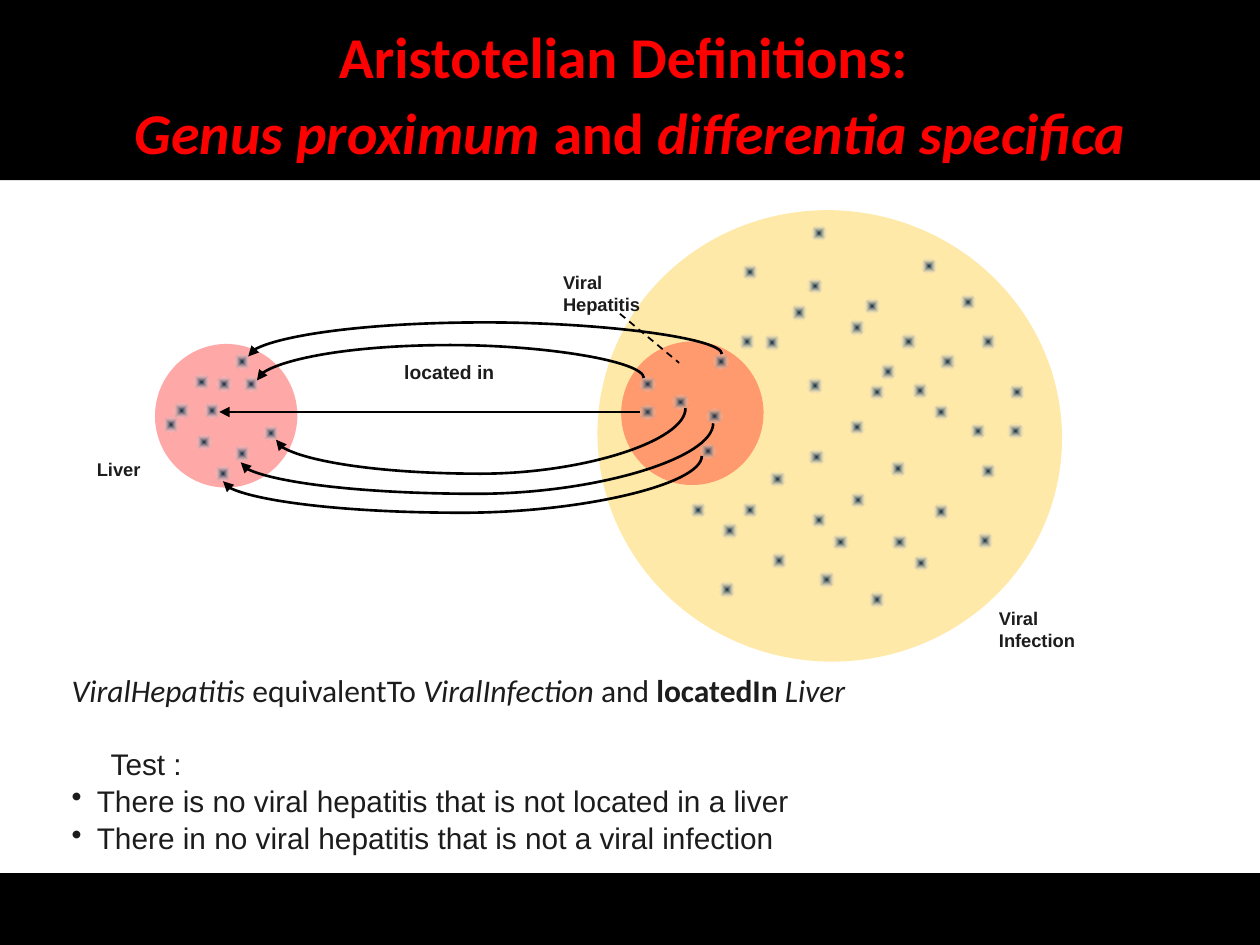
import dataclasses
import typing

import lxml.etree
import pptx
import pptx.dml.color
import pptx.enum.dml
import pptx.enum.shapes
import pptx.enum.text
import pptx.oxml
import pptx.oxml.ns
import pptx.util

COLOURS = {
    "band": "000000", "title": "FF0000", "text": "1C1C1C", "line": "000000",
    "infection": "FFC000", "organ": "FF0000", "dot": "08253C", "dot_edge": "FFFFFF",
}
SHAPES = pptx.enum.shapes.MSO_SHAPE
CONNECTORS = pptx.enum.shapes.MSO_CONNECTOR
DOT_SIZE = 0.12
DOT_TILT = 5.2
CIRCLE_TILT = 9.7


class Circle(typing.NamedTuple):
    left: float
    top: float
    width: float
    height: float
    colour: str


class Arc(typing.NamedTuple):
    """A curved arrow from an infection dot to a liver dot, peaking at bend."""
    liver: tuple[float, float]
    infection: tuple[float, float]
    bend: float


class Label(typing.NamedTuple):
    left: float
    top: float
    width: float
    height: float
    lines: list[str]
    size: float = 10.5


@dataclasses.dataclass
class Span:
    text: str
    bold: bool = False
    italic: bool = False


@dataclasses.dataclass
class Line:
    spans: list[Span]
    font: str = "Arial"
    size: float = 17
    margin: float = 0.31
    indent: float = 0
    before: float = 1
    bullet: bool = False


CIRCLES = [
    Circle(4.74, 1.67, 3.69, 3.58, "infection"),
    Circle(4.93, 2.71, 1.13, 1.14, "organ"),
    Circle(1.23, 2.73, 1.13, 1.14, "organ"),
]
# Left and top of each dot, in inches
INFECTION_DOTS = [
    (5.48, 3.99), (6.11, 3.74), (5.73, 4.15), (6.44, 4.07), (6.61, 4.24), (5.89, 3.99),
    (6.42, 3.57), (6.12, 4.39), (6.75, 3.91), (7.08, 4.24), (7.25, 4.41), (6.07, 2.66),
    (5.89, 2.1), (6.41, 3), (6.74, 3.33), (7.15, 2.65), (7.07, 3.66), (7.62, 2.34),
    (7.41, 4), (6.9, 4.7), (6.44, 1.79), (6.28, 2.42), (6.41, 2.21), (6.86, 2.37),
    (6.74, 2.54), (7.31, 2.05), (8.01, 3.05), (7.24, 3.04), (7.41, 3.21), (7.78, 3.68),
    (6.99, 2.89), (7.7, 3.36), (7.46, 2.81), (8, 3.36), (7.78, 2.65), (6.9, 3.05),
    (5.71, 4.62), (6.5, 4.54), (5.87, 2.65), (7.76, 4.23),
]
HEPATITIS_DOTS = [(5.08, 2.99), (5.61, 3.24), (5.56, 3.52), (5.08, 3.21), (5.34, 3.13), (5.66, 2.81)]
LIVER_DOTS = [
    (1.86, 2.81), (2.09, 3.38), (1.86, 3.54), (1.71, 3.7), (1.62, 3.2), (1.93, 2.99),
    (1.54, 2.97), (1.3, 3.31), (1.56, 3.45), (1.38, 3.2), (1.72, 2.99),
]
ARCS = [
    Arc((1.97, 2.83), (5.73, 2.81), 2.56),
    Arc((2.04, 3.02), (5.11, 3), 2.74),
    Arc((2.19, 3.49), (5.44, 3.24), 3.76),
    Arc((1.91, 3.67), (5.66, 3.36), 3.92),
    Arc((1.77, 3.82), (5.57, 3.62), 4.07),
]
LABELS = [
    Label(7.83, 4.77, 0.81, 0.45, ["Viral", "Infection"]),
    Label(4.37, 2.1, 0.82, 0.45, ["Viral ", "Hepatitis"]),
    Label(3.11, 2.81, 0.92, 0.29, ["located in"], 11),
    Label(0.67, 3.59, 0.55, 0.28, ["Liver"]),
]
TITLE = [
    [Span("Aristotelian Definitions: ", bold=True)],
    [Span("Genus proximum ", True, True), Span("and ", True), Span("differentia specifica", True, True)],
]
BODY = [
    Line([Span("ViralHepatitis", italic=True), Span(" equivalentTo "),
          Span("ViralInfection ", italic=True), Span("and "),
          Span("locatedIn ", bold=True), Span("Liver", italic=True)],
         "Calibri", 18, indent=-0.31),
    Line([Span("Test :")], before=20.6),
    Line([Span("There is no viral hepatitis that is not located in a liver")],
         margin=0.2, indent=-0.2, bullet=True),
    Line([Span("There in no viral hepatitis that is not a viral infection")],
         margin=0.2, indent=-0.2, bullet=True),
]


def length(inches: float) -> pptx.util.Length:
    return pptx.util.Cm(inches * 2.54)


def rgb(name: str) -> pptx.dml.color.RGBColor:
    return pptx.dml.color.RGBColor.from_string(COLOURS[name])


def add_child(parent, tag: str, **attributes: str):
    return lxml.etree.SubElement(parent, pptx.oxml.ns.qn(tag), attributes)


def add_span(para, span: Span, font: str, size: float, colour: str) -> None:
    run = para.add_run()
    run.text = span.text
    run.font.name, run.font.size = font, pptx.util.Pt(size)
    run.font.bold, run.font.italic = span.bold, span.italic
    run.font.color.rgb = rgb(colour)


def add_lines(para, lines: list[list[Span]], font: str, size: float, colour: str) -> None:
    for number, spans in enumerate(lines):
        if number:
            para.add_line_break()
        for span in spans:
            add_span(para, span, font, size, colour)


def add_plain_shape(page, kind, left: float, top: float, width: float, height: float, colour: str):
    shape = page.shapes.add_shape(kind, *map(length, (left, top, width, height)))
    shape.shadow.inherit = False
    shape.fill.solid()
    shape.fill.fore_color.rgb = rgb(colour)
    shape.line.fill.background()
    return shape


def add_circle(page, circle: Circle) -> None:
    shape = add_plain_shape(page, SHAPES.OVAL, *circle)
    shape.rotation = CIRCLE_TILT
    colour = shape._element.spPr.find(".//" + pptx.oxml.ns.qn("a:srgbClr"))
    add_child(colour, "a:alpha", val="34000")


def add_dot(page, left: float, top: float) -> None:
    shape = add_plain_shape(page, SHAPES.OVAL, left, top, DOT_SIZE, DOT_SIZE, "dot")
    shape.rotation = DOT_TILT
    gradient = pptx.oxml.parse_xml(
        f'<a:gradFill {pptx.oxml.ns.nsdecls("a")} rotWithShape="1"><a:gsLst>'
        f'<a:gs pos="0"><a:srgbClr val="{COLOURS["dot"]}"/></a:gs>'
        f'<a:gs pos="100000"><a:srgbClr val="{COLOURS["dot_edge"]}"><a:alpha val="0"/></a:srgbClr></a:gs>'
        '</a:gsLst><a:path path="shape">'
        '<a:fillToRect l="50000" t="50000" r="50000" b="50000"/></a:path></a:gradFill>')
    properties = shape._element.spPr
    properties.replace(properties.find(pptx.oxml.ns.qn("a:solidFill")), gradient)


def add_line(page, kind, start: tuple[float, float], end: tuple[float, float], width: float, arrow: bool):
    line = page.shapes.add_connector(kind, *map(length, (*start, *end)))
    line.line.color.rgb = rgb("line")
    line.line.width = pptx.util.Pt(width)
    if arrow:
        add_child(line.line._get_or_add_ln(), "a:headEnd", type="triangle")
    add_child(line._element.spPr, "a:effectLst")
    return line


def add_arc(page, arc: Arc) -> None:
    """Lay the curve out upright around its middle, then turn it a quarter."""
    (x1, y1), (x2, y2) = arc.liver, arc.infection
    middle_x, middle_y = (x1 + x2) / 2, (y1 + y2) / 2
    rise, run = (y1 - y2) / 2, (x2 - x1) / 2
    line = add_line(page, CONNECTORS.CURVE, (middle_x + rise, middle_y + run),
                    (middle_x - rise, middle_y - run), 1.5, True)
    properties = line._element.spPr
    properties.find(pptx.oxml.ns.qn("a:xfrm")).set("rot", "5400000")
    guides = properties.find(".//" + pptx.oxml.ns.qn("a:avLst"))
    bend = round((y1 - arc.bend) / (y1 - y2) * 100000)
    add_child(guides, "a:gd", name="adj1", fmla=f"val {bend}")


def add_label(page, label: Label) -> None:
    box = page.shapes.add_textbox(*map(length, label[:4]))
    box.text_frame.word_wrap = False
    lines = [[Span(text, bold=True)] for text in label.lines]
    add_lines(box.text_frame.paragraphs[0], lines, "Arial", label.size, "text")


def add_title(page) -> None:
    frame = add_plain_shape(page, SHAPES.RECTANGLE, 0, 0, 10, 1.43, "band").text_frame
    frame.word_wrap = True
    frame.vertical_anchor = pptx.enum.text.MSO_ANCHOR.MIDDLE
    frame.margin_left = frame.margin_right = length(0.08)
    frame.margin_top = frame.margin_bottom = length(0.04)
    para = frame.paragraphs[0]
    para.alignment = pptx.enum.text.PP_ALIGN.CENTER
    para.line_spacing = 1.1
    add_lines(para, TITLE, "Calibri", 33, "title")


def add_body(page) -> None:
    frame = page.shapes.add_textbox(*map(length, (0.47, 5.28, 9.1, 1.6))).text_frame
    frame.word_wrap = True
    for number, line in enumerate(BODY):
        para = frame.add_paragraph() if number else frame.paragraphs[0]
        para.space_before = pptx.util.Pt(line.before)
        properties = para._p.get_or_add_pPr()
        properties.set("marL", str(length(line.margin)))
        properties.set("indent", str(length(line.indent)))
        if line.bullet:
            add_child(properties, "a:buChar", char="•")
        add_lines(para, [line.spans], line.font, line.size, "text")


def main() -> None:
    deck = pptx.Presentation()
    deck.slide_width, deck.slide_height = length(10), length(7.5)
    page = deck.slides.add_slide(deck.slide_layouts[6])
    # Bands
    add_plain_shape(page, SHAPES.RECTANGLE, 0, 6.93, 10, 0.57, "band")
    add_title(page)
    # Sets and their members
    for circle in CIRCLES:
        add_circle(page, circle)
    for left, top in INFECTION_DOTS + HEPATITIS_DOTS + LIVER_DOTS:
        add_dot(page, left, top)
    # Relations
    for arc in ARCS:
        add_arc(page, arc)
    add_line(page, CONNECTORS.CURVE, (1.74, 3.27), (5.08, 3.27), 1.5, True)
    # Wording
    for label in LABELS:
        add_label(page, label)
    pointer = add_line(page, CONNECTORS.STRAIGHT, (4.92, 2.49), (5.39, 2.88), 1, False)
    pointer.line.dash_style = pptx.enum.dml.MSO_LINE.DASH
    add_body(page)
    deck.save("out.pptx")


if __name__ == "__main__":
    main()
